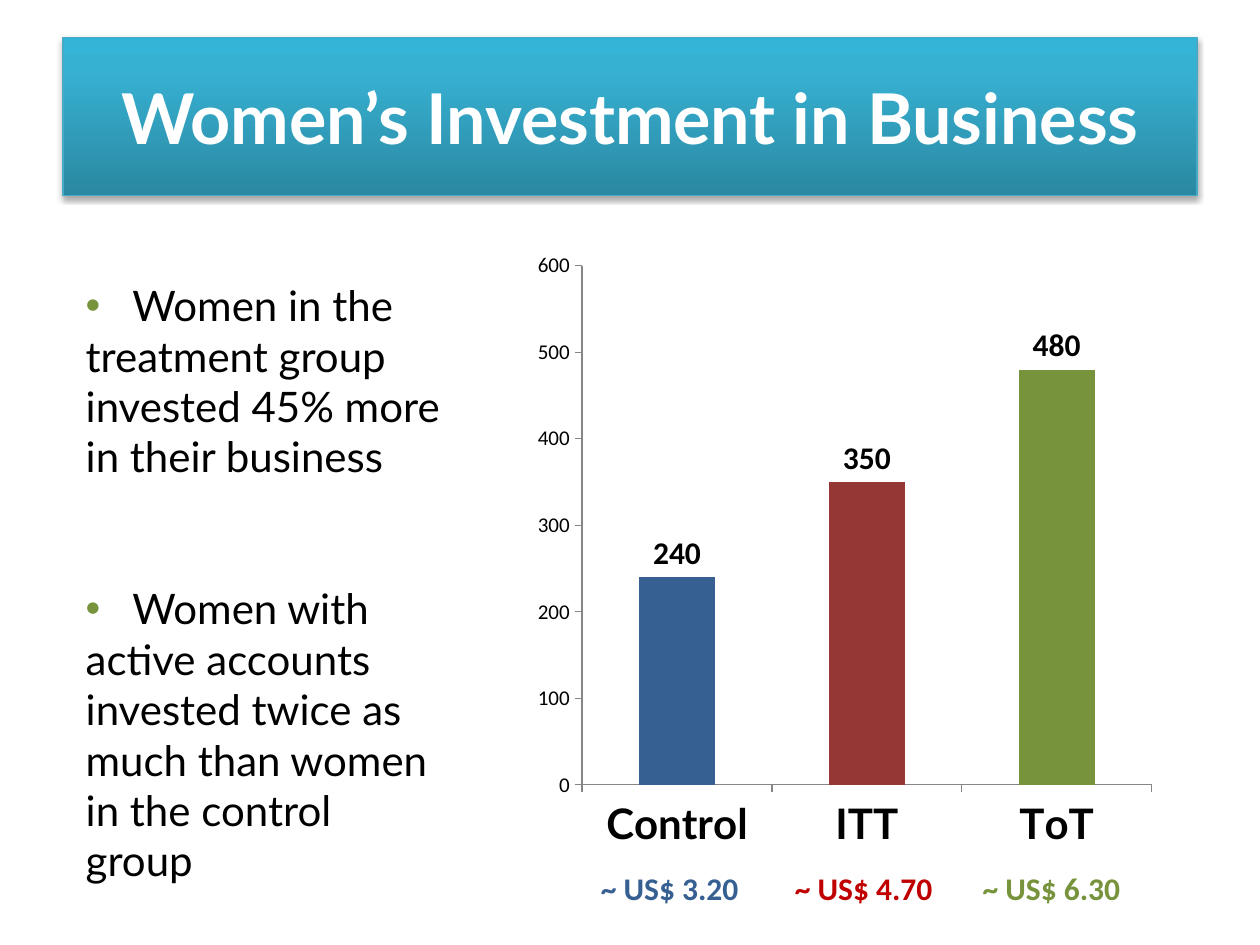
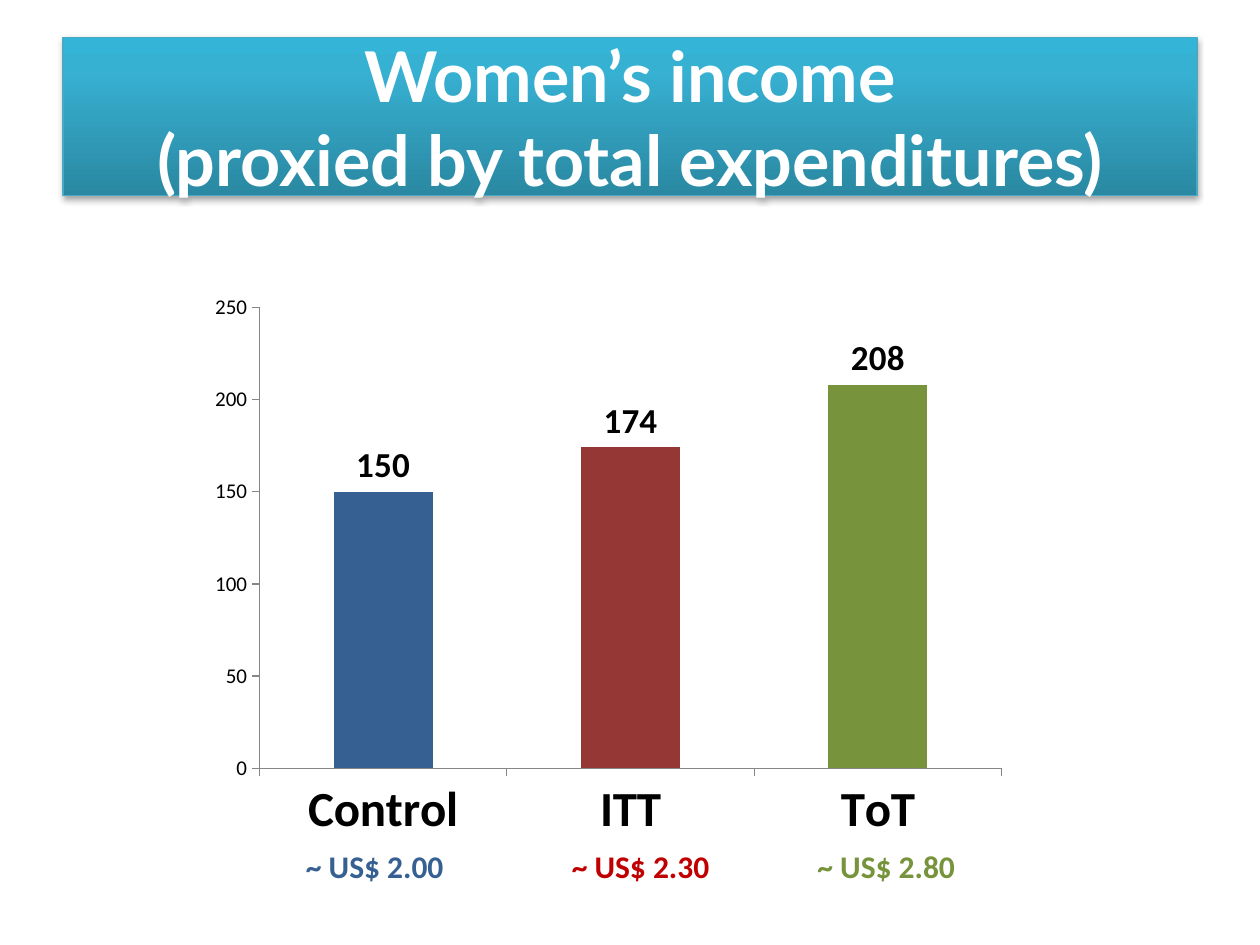
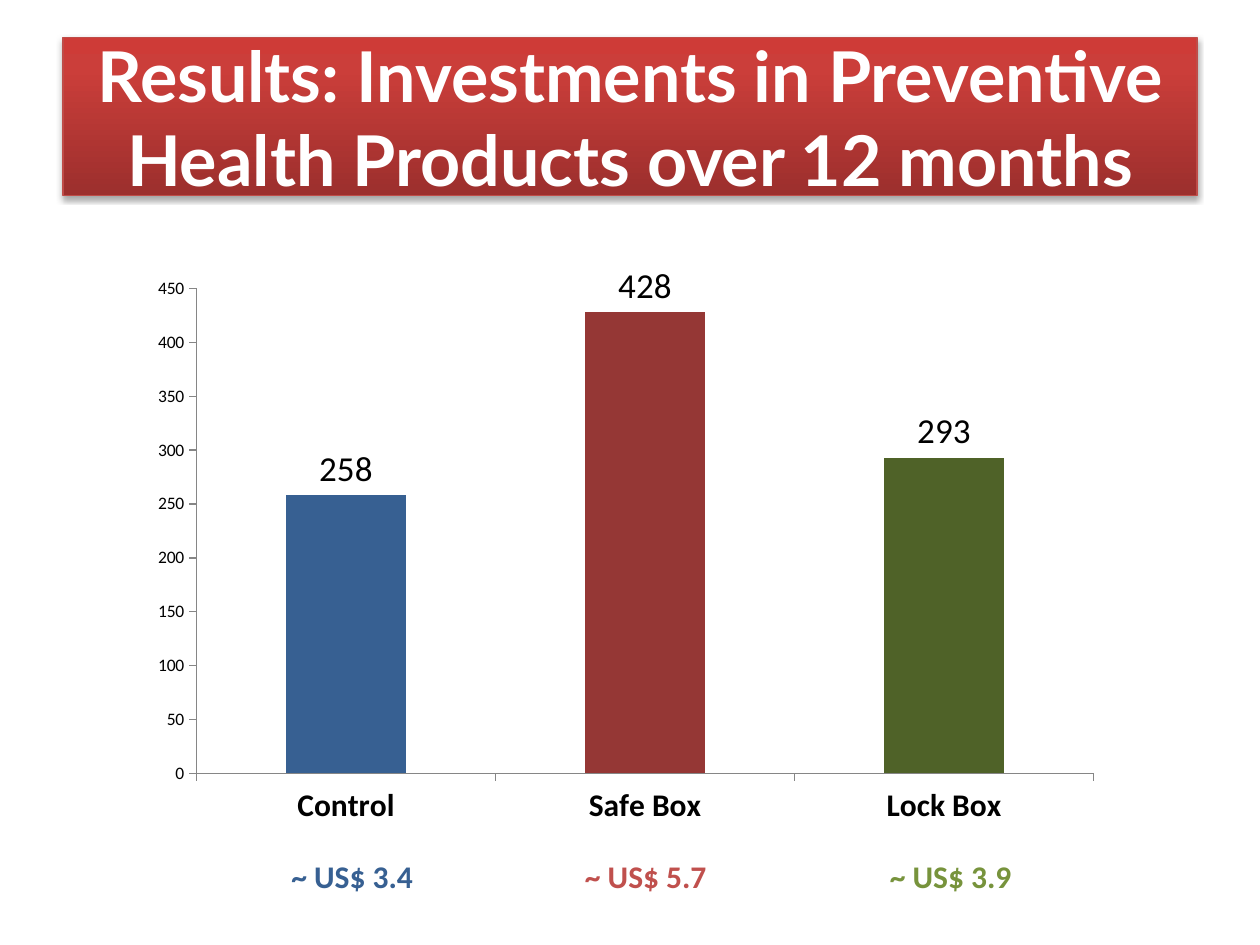
from dataclasses import dataclass
import copy

import lxml.etree
import pptx
import pptx.chart.data
import pptx.dml.color
import pptx.enum.chart
import pptx.enum.text
import pptx.oxml.ns
import pptx.util

Inches = pptx.util.Inches
Pt = pptx.util.Pt
qn = pptx.oxml.ns.qn

COLORS = {
    "white": "FFFFFF", "black": "000000", "axis": "868686", "series": "4F81BD",
    "blue": "376092", "brick": "953735", "green": "77933C", "dark green": "4F6228",
    "red": "C00000", "rose": "C0504D",
    "teal low": "2A88A2", "teal mid": "37B1D2", "teal high": "34B4D6", "teal line": "46AAC5",
    "red low": "9C2F2D", "red mid": "CB3E3A", "red high": "CE3B37", "red line": "BF4C48",
}
HEADING_FONT, CHART_FONT = "Lato", "Calibri"
TITLE_AND_CONTENT, TITLE_ONLY = 1, 5


@dataclass(frozen=True)
class Box:
    left: float
    top: float
    width: float
    height: float

    def lengths(self) -> tuple:
        return tuple(Inches(n) for n in (self.left, self.top, self.width, self.height))


@dataclass(frozen=True)
class BarChart:
    box: Box
    plot: Box
    categories: tuple
    values: tuple
    bar_colors: tuple
    maximum: int
    step: int
    category_size: int
    label_size: int
    category_font: str = CHART_FONT
    value_size: int = 12
    bold_labels: bool = True


@dataclass(frozen=True)
class DollarNotes:
    box: Box
    amounts: tuple  # (text, colour name) pairs
    tab_stops: tuple = ()
    centered: bool = False


@dataclass(frozen=True)
class ResultSlide:
    title_lines: tuple
    band: str
    chart: BarChart
    notes: tuple
    findings: tuple = ()


TITLE_BOX = Box(0.5, 0.3, 9, 1.25)
FINDINGS_BOX = Box(0.58, 2.17, 3.08, 4.54)
GROUPS = ("Control", "ITT", "ToT")
GROUP_COLORS = ("blue", "brick", "green")

RESULT_SLIDES = (
    ResultSlide(
        ("Women’s Investment in Business",), "teal",
        BarChart(Box(4.17, 1.92, 5.08, 4.92), Box(4.62, 2.11, 4.52, 4.12),
                 GROUPS, (240, 350, 480), GROUP_COLORS, 600, 100, 24, 18, HEADING_FONT),
        (DollarNotes(Box(4.67, 6.85, 4.58, 0.65),
                     (("~ US$ 3.20", "blue"), ("~ US$ 4.70", "red"), ("~ US$ 6.30", "green")),
                     (1.54, 3.03)),),
        ("Women in the treatment group invested 45% more in their business",
         "Women with active accounts invested twice as much than women in the control group"),
    ),
    ResultSlide(
        ("Women’s income", "(proxied by total expenditures)"), "teal",
        BarChart(Box(1.58, 2.25, 6.5, 4.5), Box(2.06, 2.44, 5.89, 3.66),
                 GROUPS, (150, 174, 208), GROUP_COLORS, 250, 50, 28, 20),
        (DollarNotes(Box(2.33, 6.67, 5.5, 0.65),
                     (("~ US$ 2.00", "blue"), ("~ US$ 2.30", "red"), ("~ US$ 2.80", "green")),
                     (2.11, 4.06)),),
    ),
    ResultSlide(
        ("Results: Investments in Preventive Health Products over 12 months",), "red",
        BarChart(Box(0.75, 2, 8.17, 4.83), Box(1.56, 2.29, 7.12, 3.85),
                 ("Control", "Safe Box", "Lock Box"), (258, 428, 293),
                 ("blue", "brick", "dark green"), 450, 50, 18, 20,
                 value_size=10, bold_labels=False),
        tuple(DollarNotes(Box(left, 6.75, 1.25, 0.4), (amount,), centered=True)
              for left, amount in ((2.17, ("~ US$ 3.4", "blue")),
                                   (4.5, ("~ US$ 5.7", "rose")),
                                   (6.92, ("~ US$ 3.9", "green")))),
    ),
)


# Shared helpers
def rgb(name: str) -> pptx.dml.color.RGBColor:
    return pptx.dml.color.RGBColor.from_string(COLORS[name])


def format_font(font, size: int, name: str, color: str, bold: bool = False) -> None:
    font.size, font.name, font.bold = Pt(size), name, bold
    font.color.rgb = rgb(color)


def add_run(paragraph, text: str, size: int, name: str, color: str, bold: bool = False) -> None:
    run = paragraph.add_run()
    run.text = text
    format_font(run.font, size, name, color, bold)


def add_element(parent, tag: str, **attributes):
    return lxml.etree.SubElement(parent, qn(tag), {k: str(v) for k, v in attributes.items()})


def add_tab_stops(paragraph, stops: tuple) -> None:
    tab_list = add_element(paragraph._p.get_or_add_pPr(), "a:tabLst")
    for stop in stops:
        add_element(tab_list, "a:tab", pos=int(Inches(stop)), algn="l")


def place(shape, box: Box) -> None:
    shape.left, shape.top, shape.width, shape.height = box.lengths()


# Title band
def format_band(shape, band: str) -> None:
    shape.fill.gradient()
    shape.fill.gradient_angle = 90
    properties = shape.element.spPr
    stop_list = properties.find(".//" + qn("a:gsLst"))
    stop_list.append(copy.deepcopy(stop_list[-1]))
    levels = (("low", 0), ("mid", 0.8), ("high", 1))
    for stop, (level, position) in zip(shape.fill.gradient_stops, levels):
        stop.color.rgb = rgb(f"{band} {level}")
        stop.position = position
    shape.line.color.rgb = rgb(f"{band} line")
    shape.line.width = Pt(0.75)
    effects = add_element(properties, "a:effectLst")
    shadow = add_element(effects, "a:outerShdw", blurRad=int(Pt(3.1)), dist=int(Pt(1.8)),
                         dir=5400000, rotWithShape=0)
    shadow_color = add_element(shadow, "a:srgbClr", val=COLORS["black"])
    add_element(shadow_color, "a:alpha", val=35000)


def fill_title(slide, lines: tuple, band: str) -> None:
    title = slide.shapes.title
    place(title, TITLE_BOX)
    format_band(title, band)
    frame = title.text_frame
    frame.auto_size = pptx.enum.text.MSO_AUTO_SIZE.NONE
    frame.vertical_anchor = pptx.enum.text.MSO_ANCHOR.MIDDLE
    paragraph = frame.paragraphs[0]
    paragraph.alignment = pptx.enum.text.PP_ALIGN.CENTER
    for index, line in enumerate(lines):
        if index:
            paragraph.add_line_break()
        add_run(paragraph, line, 40, HEADING_FONT, "white", True)


# Bulleted findings
def fill_findings(slide, findings: tuple) -> None:
    body = slide.placeholders[1]
    place(body, FINDINGS_BOX)
    frame = body.text_frame
    frame.auto_size = pptx.enum.text.MSO_AUTO_SIZE.NONE
    for index, finding in enumerate(findings):
        paragraph = frame.add_paragraph() if index else frame.paragraphs[0]
        paragraph.space_before = Pt(58 if index else 0)
        properties = paragraph._p.get_or_add_pPr()
        properties.set("marL", "0")
        properties.set("indent", "0")
        bullet_color = add_element(properties, "a:buClr")
        add_element(bullet_color, "a:srgbClr", val=COLORS["green"])
        add_element(properties, "a:buFont", typeface="Arial")
        add_element(properties, "a:buChar", char="•")
        add_tab_stops(paragraph, (0.37,))
        add_run(paragraph, "\t" + finding, 24, HEADING_FONT, "black")


# Bar chart
def set_plot_area(chart, spec: BarChart) -> None:
    plot_area = chart.element.find(".//" + qn("c:plotArea"))
    layout = plot_area.find(qn("c:layout"))
    if layout is None:
        layout = lxml.etree.Element(qn("c:layout"))
        plot_area.insert(0, layout)
    manual = add_element(layout, "c:manualLayout")
    add_element(manual, "c:layoutTarget", val="inner")
    add_element(manual, "c:xMode", val="edge")
    add_element(manual, "c:yMode", val="edge")
    box, plot = spec.box, spec.plot
    fractions = {"x": (plot.left - box.left) / box.width, "y": (plot.top - box.top) / box.height,
                 "w": plot.width / box.width, "h": plot.height / box.height}
    for key, fraction in fractions.items():
        add_element(manual, f"c:{key}", val=round(fraction, 4))


def format_axis(axis, size: int, font: str, bold: bool) -> None:
    axis.has_major_gridlines = False
    axis.major_tick_mark = pptx.enum.chart.XL_TICK_MARK.OUTSIDE
    axis.minor_tick_mark = pptx.enum.chart.XL_TICK_MARK.NONE
    axis.format.line.color.rgb = rgb("axis")
    axis.format.line.width = Pt(0.75)
    format_font(axis.tick_labels.font, size, font, "black", bold)


def add_bar_chart(slide, spec: BarChart) -> None:
    data = pptx.chart.data.CategoryChartData()
    data.categories = spec.categories
    data.add_series("Series 1", spec.values)
    chart = slide.shapes.add_chart(pptx.enum.chart.XL_CHART_TYPE.COLUMN_CLUSTERED,
                                   *spec.box.lengths(), data).chart
    chart.has_legend = chart.has_title = False
    format_font(chart.font, 10, CHART_FONT, "black")
    set_plot_area(chart, spec)
    format_axis(chart.category_axis, spec.category_size, spec.category_font, True)
    format_axis(chart.value_axis, spec.value_size, CHART_FONT, False)
    chart.value_axis.minimum_scale = 0
    chart.value_axis.maximum_scale = spec.maximum
    chart.value_axis.major_unit = spec.step

    plot = chart.plots[0]
    plot.vary_by_categories = False
    plot.gap_width = 150
    series = plot.series[0]
    series.format.fill.solid()
    series.format.fill.fore_color.rgb = rgb("series")
    for index, color in enumerate(spec.bar_colors):
        fill = series.points[index].format.fill
        fill.solid()
        fill.fore_color.rgb = rgb(color)
    labels = series.data_labels
    labels.show_value = True
    labels.position = pptx.enum.chart.XL_LABEL_POSITION.OUTSIDE_END
    format_font(labels.font, spec.label_size, CHART_FONT, "black", spec.bold_labels)


# Dollar equivalents under the bars
def add_dollar_notes(slide, notes: DollarNotes) -> None:
    frame = slide.shapes.add_textbox(*notes.box.lengths()).text_frame
    frame.word_wrap = True
    paragraph = frame.paragraphs[0]
    if notes.centered:
        paragraph.alignment = pptx.enum.text.PP_ALIGN.CENTER
    if notes.tab_stops:
        add_tab_stops(paragraph, notes.tab_stops)
    for index, (text, color) in enumerate(notes.amounts):
        add_run(paragraph, "\t" + text if index else text, 18, CHART_FONT, color, True)


def add_result_slide(presentation, result: ResultSlide) -> None:
    layout = TITLE_AND_CONTENT if result.findings else TITLE_ONLY
    slide = presentation.slides.add_slide(presentation.slide_layouts[layout])
    fill_title(slide, result.title_lines, result.band)
    add_bar_chart(slide, result.chart)
    if result.findings:
        fill_findings(slide, result.findings)
    for notes in result.notes:
        add_dollar_notes(slide, notes)


def main() -> None:
    presentation = pptx.Presentation()
    presentation.slide_width, presentation.slide_height = Inches(10), Inches(7.5)
    for result in RESULT_SLIDES:
        add_result_slide(presentation, result)
    presentation.save("out.pptx")


if __name__ == "__main__":
    main()
